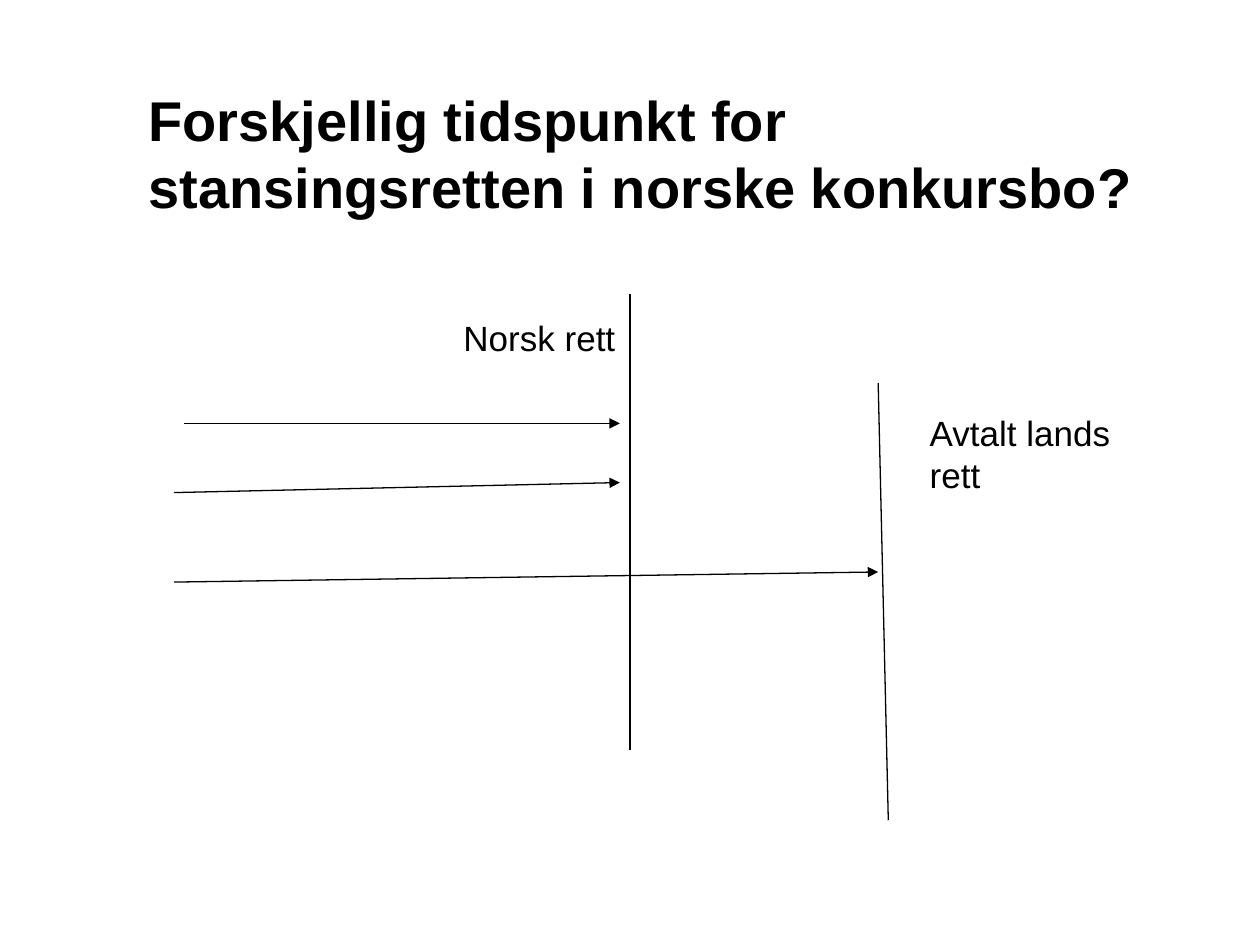
from lxml import etree
from pptx import Presentation
from pptx.dml.color import RGBColor
from pptx.enum.shapes import MSO_CONNECTOR
from pptx.enum.text import MSO_ANCHOR
from pptx.oxml.ns import qn
from pptx.util import Inches, Pt

STRAIGHT = MSO_CONNECTOR.STRAIGHT
TOP, MIDDLE = MSO_ANCHOR.TOP, MSO_ANCHOR.MIDDLE
COLORS = {"ink": "000000", "paper": "FFFFFF"}
INK = RGBColor.from_string(COLORS["ink"])

deck = Presentation()
deck.slide_width, deck.slide_height = Inches(10), Inches(7.5)
# One column or row is a hundredth of the slide
COL, ROW = deck.slide_width / 100, deck.slide_height / 100
slide = deck.slides.add_slide(deck.slide_layouts[6])
slide.background.fill.solid()
slide.background.fill.fore_color.rgb = RGBColor.from_string(COLORS["paper"])


def add_text(words, left, top, width, height, size, bold=False, anchor=TOP):
    box = slide.shapes.add_textbox(
        int(left * COL), int(top * ROW), int(width * COL), int(height * ROW))
    frame = box.text_frame
    frame.word_wrap = True
    frame.vertical_anchor = anchor
    run = frame.paragraphs[0].add_run()
    run.text = words
    run.font.name, run.font.size, run.font.bold = "Arial", Pt(size), bold
    run.font.color.rgb = INK


def add_line(x1, y1, x2, y2, arrow=False):
    line = slide.shapes.add_connector(
        STRAIGHT, int(x1 * COL), int(y1 * ROW), int(x2 * COL), int(y2 * ROW))
    line.line.color.rgb = INK
    line.line.width = Pt(0.75)
    if arrow:
        etree.SubElement(line.line._get_or_add_ln(), qn("a:tailEnd"), type="triangle")
    etree.SubElement(line._element.spPr, qn("a:effectLst"))


# Title
add_text("Forskjellig tidspunkt for stansingsretten i norske konkursbo?",
         10.8, 9.33, 84.2, 13.6, 32, True, MIDDLE)

# Time limits under each law
norsk, avtalt = 50, 69.7
add_line(norsk, 31.07, norsk, 79.33)
add_line(avtalt, 40.53, avtalt + 0.8, 86.8)

# Arrows running up to a limit
for x1, y1, x2, y2 in [
    (14.6, 44.8, norsk - 0.8, 44.8),
    (13.8, 52.13, norsk - 0.8, 51.07),
    (13.8, 61.6, avtalt, 60.53),
]:
    add_line(x1, y1, x2, y2, arrow=True)

# Labels
add_text("Norsk rett", 35.8, 32.8, 15.7, 5.87, 20)
add_text("Avtalt lands rett", 72.8, 42.93, 16.5, 10.27, 20)

deck.save("out.pptx")
